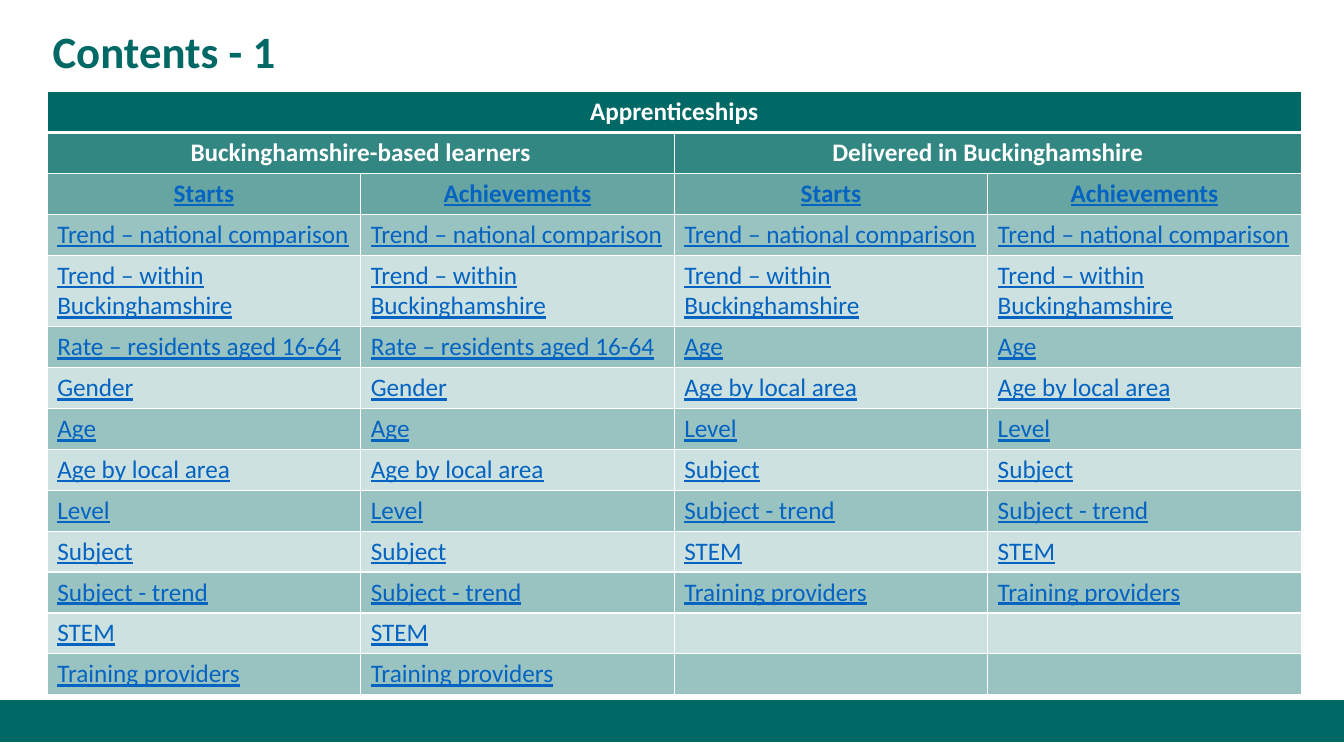
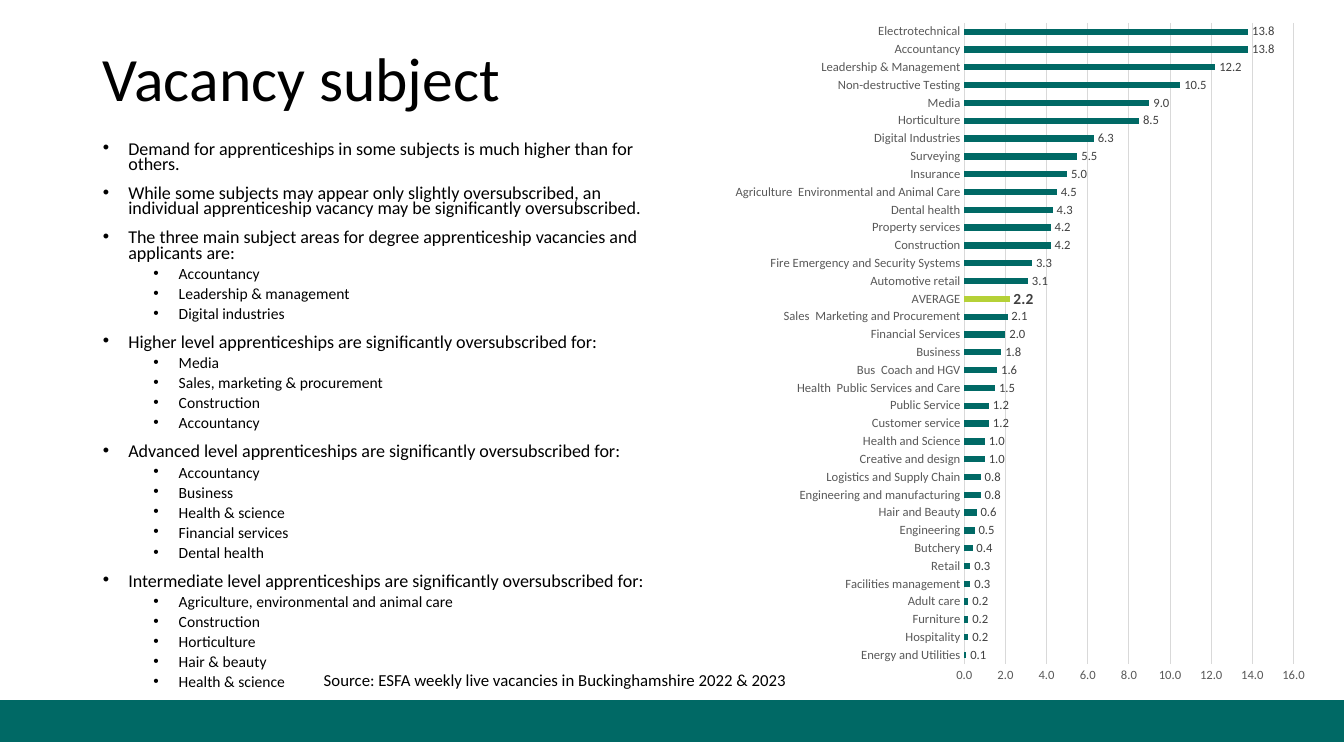
from dataclasses import dataclass
from itertools import zip_longest

from lxml import etree
from pptx import Presentation
from pptx import util as u
from pptx.chart import data as cd
from pptx.dml.color import RGBColor
from pptx.enum import chart as ch
from pptx.enum import shapes, text
from pptx.oxml import ns

Cm, Pt = u.Cm, u.Pt


@dataclass
class Theme:
    font: str = "Calibri"
    teal: str = "006965"
    lime: str = "B5D137"
    link: str = "0563C1"
    white: str = "FFFFFF"
    black: str = "000000"
    axis: str = "595959"
    label: str = "404040"
    grid: str = "D9D9D9"
    head: float = 32
    title: float = 44
    cell: float = 18
    point: float = 12.9
    sub: float = 11.1
    note: float = 12
    tick: float = 9
    mean: float = 11


T = Theme()

TOP = "Apprenticeships"
GROUPS = ["Buckinghamshire-based learners", "Delivered in Buckinghamshire"]
KINDS = ["Starts", "Achievements"]
TRENDS = ["Trend – national comparison", "Trend – within Buckinghamshire"]
SHARED = ["Age", "Age by local area", "Level", "Subject", "Subject - trend",
          "STEM", "Training providers"]
BASED = TRENDS + ["Rate – residents aged 16-64", "Gender"] + SHARED
GIVEN = TRENDS + SHARED

POINTS = [
    ("Demand for apprenticeships in some subjects is much higher than for others.", []),
    ("While some subjects may appear only slightly oversubscribed, an individual "
     "apprenticeship vacancy may be significantly oversubscribed.", []),
    ("The three main subject areas for degree apprenticeship vacancies and applicants are:",
     ["Accountancy", "Leadership & management", "Digital industries"]),
    ("Higher level apprenticeships are significantly oversubscribed for:",
     ["Media", "Sales, marketing & procurement", "Construction", "Accountancy"]),
    ("Advanced level apprenticeships are significantly oversubscribed for:",
     ["Accountancy", "Business", "Health & science", "Financial services",
      "Dental health"]),
    ("Intermediate level apprenticeships are significantly oversubscribed for:",
     ["Agriculture, environmental and animal care", "Construction", "Horticulture",
      "Hair & beauty", "Health & science"]),
]
SOURCE = "Source: ESFA weekly live vacancies in Buckinghamshire 2022 & 2023"

MEAN = "AVERAGE"
RATES = [
    ("Energy and Utilities", 0.1),
    ("Hospitality", 0.2),
    ("Furniture", 0.2),
    ("Adult care", 0.2),
    ("Facilities management", 0.3),
    ("Retail", 0.3),
    ("Butchery", 0.4),
    ("Engineering", 0.5),
    ("Hair and Beauty", 0.6),
    ("Engineering and manufacturing", 0.8),
    ("Logistics and Supply Chain", 0.8),
    ("Creative and design", 1.0),
    ("Health and Science", 1.0),
    ("Customer service", 1.2),
    ("Public Service", 1.2),
    ("Health  Public Services and Care", 1.5),
    ("Bus  Coach and HGV", 1.6),
    ("Business", 1.8),
    ("Financial Services", 2.0),
    ("Sales  Marketing and Procurement", 2.1),
    (MEAN, 2.2),
    ("Automotive retail", 3.1),
    ("Fire Emergency and Security Systems", 3.3),
    ("Construction", 4.2),
    ("Property services", 4.2),
    ("Dental health", 4.3),
    ("Agriculture  Environmental and Animal Care", 4.5),
    ("Insurance", 5.0),
    ("Surveying", 5.5),
    ("Digital Industries", 6.3),
    ("Horticulture", 8.5),
    ("Media", 9.0),
    ("Non-destructive Testing", 10.5),
    ("Leadership & Management", 12.2),
    ("Accountancy", 13.8),
    ("Electrotechnical", 13.8),
]


def rgb(tint):
    return RGBColor.from_string(tint)


def style(font, size, tint, bold=False):
    font.name, font.size, font.bold = T.font, Pt(size), bold
    font.color.rgb = rgb(tint)


def write(para, words, size, tint, bold=False, line=None):
    run = para.add_run()
    run.text = words
    style(run.font, size, tint, bold)
    run.font.underline = line


def place(shape, left, top, width, height):
    shape.left, shape.top = Cm(left), Cm(top)
    shape.width, shape.height = Cm(width), Cm(height)


def add_band(deck, slide):
    band = slide.shapes.add_shape(shapes.MSO_SHAPE.RECTANGLE, 0, Cm(17.65),
                                  deck.slide_width, Cm(1.02))
    band.shadow.inherit = False
    band.fill.solid()
    band.fill.fore_color.rgb = band.line.color.rgb = rgb(T.teal)
    band.line.width = Pt(1)
    band.element.nvSpPr.cNvPr.set("id", "20")
    deck.slide_master.element.cSld.spTree.insert(2, band.element)


def add_title(slide, words, box, size, tint, bold=False):
    title = slide.shapes.title
    place(title, *box)
    frame = title.text_frame
    frame.auto_size = text.MSO_AUTO_SIZE.NONE
    frame.vertical_anchor = text.MSO_ANCHOR.MIDDLE
    para = frame.paragraphs[0]
    para.alignment, para.line_spacing = text.PP_ALIGN.LEFT, 0.9
    write(para, words, size, tint, bold)


def paint(cell, alpha, base):
    props = cell._tc.get_or_add_tcPr()
    for side in "LRTB":
        width = base if side == "B" else 1
        line = etree.SubElement(props, ns.qn("a:ln" + side), w=str(Pt(width)))
        fill = etree.SubElement(line, ns.qn("a:solidFill"))
        etree.SubElement(fill, ns.qn("a:srgbClr"), val=T.white)
    cell.fill.solid()
    cell.fill.fore_color.rgb = rgb(T.teal)
    tint = props.find(ns.qn("a:solidFill")).find(ns.qn("a:srgbClr"))
    etree.SubElement(tint, ns.qn("a:alpha"), val=str(alpha * 1000))


def add_index(slide):
    rows = [[TOP, "", "", ""], [GROUPS[0], "", GROUPS[1], ""], KINDS * 2]
    rows += zip_longest(BASED, BASED, GIVEN, GIVEN, fillvalue="")
    wide, high = 7.9, 1.03
    table = slide.shapes.add_table(len(rows), 4, Cm(1.19), Cm(2.31),
                                   Cm(4 * wide), Cm(len(rows) * high)).table
    table.first_row = table.horz_banding = False
    for col in table.columns:
        col.width = Cm(wide)
    for i, row in enumerate(rows):
        table.rows[i].height = Cm(high)
        head = i < 3
        alpha = 100 - 20 * i if head else 40 - 20 * ((i - 3) % 2)
        for j, words in enumerate(row):
            cell = table.cell(i, j)
            paint(cell, alpha, 1 if i else 3)
            if words:
                para = cell.text_frame.paragraphs[0]
                if head:
                    para.alignment = text.PP_ALIGN.CENTER
                link = i > 1
                write(para, words, T.cell, T.link if link else T.white, head, link)
    for i, left, right in [(0, 0, 3), (1, 0, 1), (1, 2, 3)]:
        table.cell(i, left).merge(table.cell(i, right))


def add_points(slide):
    body = slide.placeholders[1]
    place(body, 2.34, 3.48, 14.81, 14.07)
    frame = body.text_frame
    frame.auto_size = text.MSO_AUTO_SIZE.NONE
    items = []
    for lead, subs in POINTS:
        items += [(0, lead)] + [(1, sub) for sub in subs]
    for i, (level, words) in enumerate(items):
        para = frame.add_paragraph() if i else frame.paragraphs[0]
        para.level, para.line_spacing = level, 0.7
        para.space_before = Pt((10, 5)[level] if i else 0)
        props = para._p.get_or_add_pPr()
        props.set("marL", str(Cm((0.64, 1.91)[level])))
        props.set("indent", str(Cm(-0.64)))
        etree.SubElement(props, ns.qn("a:buFont"), typeface="Arial")
        etree.SubElement(props, ns.qn("a:buChar"), char="•")
        write(para, words, (T.point, T.sub)[level], T.black)


def add_source(slide):
    box = slide.shapes.add_textbox(Cm(4.93), Cm(16.76), Cm(15.14), Cm(0.76))
    box.text_frame.word_wrap = True
    para = box.text_frame.paragraphs[0]
    para.alignment = text.PP_ALIGN.RIGHT
    write(para, SOURCE, T.note, T.black)


def add_rates(slide):
    names, rates = zip(*RATES)
    data = cd.CategoryChartData(number_format="0.0")
    data.categories = names
    data.add_series("Series 1", rates)
    chart = slide.shapes.add_chart(ch.XL_CHART_TYPE.BAR_CLUSTERED, Cm(18.24), Cm(0.23),
                                   Cm(14.94), Cm(17.32), data).chart
    chart.has_title = chart.has_legend = False
    style(chart.font, 10, T.black)
    cat, val = chart.category_axis, chart.value_axis
    for axis in (cat, val):
        axis.major_tick_mark = axis.minor_tick_mark = ch.XL_TICK_MARK.NONE
        style(axis.tick_labels.font, T.tick, T.axis)
    cat.has_major_gridlines, val.has_major_gridlines = False, True
    for line in (cat.format.line, val.major_gridlines.format.line):
        line.color.rgb, line.width = rgb(T.grid), Pt(0.75)
    val.format.line.fill.background()
    val.minimum_scale, val.maximum_scale, val.major_unit = 0, 16, 2
    val.tick_labels.number_format = "0.0"
    val.tick_labels.number_format_is_linked = False

    plot = chart.plots[0]
    plot.gap_width, plot.vary_by_categories = 182, False
    bars = plot.series[0]
    bars.invert_if_negative = False
    mean = bars.points[names.index(MEAN)]
    for part, tint in ((bars, T.teal), (mean, T.lime)):
        part.format.fill.solid()
        part.format.fill.fore_color.rgb = rgb(tint)
    tags = bars.data_labels
    tags.show_value = True
    tags.number_format, tags.number_format_is_linked = "0.0", False
    tags.position = mean.data_label.position = ch.XL_LABEL_POSITION.OUTSIDE_END
    style(tags.font, T.tick, T.label)
    style(mean.data_label.font, T.mean, T.label, True)


def main():
    deck = Presentation()
    deck.slide_width, deck.slide_height = Cm(33.87), Cm(19.05)
    first = deck.slides.add_slide(deck.slide_layouts[5])
    add_band(deck, first)
    add_title(first, "Contents - 1", (1.07, 0.43, 29.21, 1.88), T.head, T.teal, True)
    add_index(first)

    second = deck.slides.add_slide(deck.slide_layouts[1])
    add_title(second, "Vacancy subject", (2.34, 1.02, 14.81, 2.08), T.title, T.black)
    add_points(second)
    add_source(second)
    add_rates(second)
    deck.save("out.pptx")


if __name__ == "__main__":
    main()
